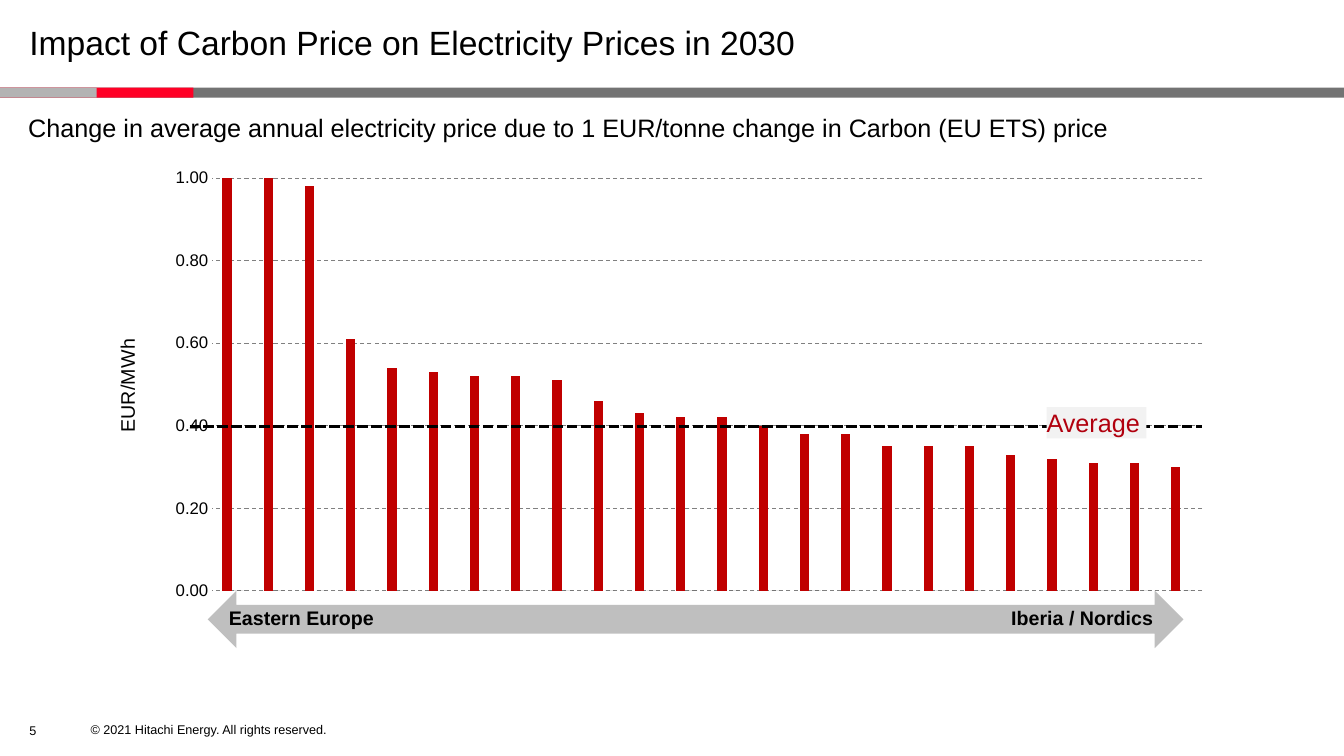
from dataclasses import dataclass

from lxml.etree import SubElement
from pptx import Presentation
from pptx.chart.chart import Chart
from pptx.chart.data import CategoryChartData
from pptx.dml.color import RGBColor
from pptx.enum.chart import XL_CHART_TYPE, XL_TICK_MARK
from pptx.enum.dml import MSO_LINE
from pptx.enum.shapes import MSO_CONNECTOR, MSO_SHAPE
from pptx.enum.text import MSO_ANCHOR
from pptx.oxml.ns import qn
from pptx.slide import Slide
from pptx.util import Inches, Pt

WIDTH, HEIGHT = Inches(13.33), Inches(7.5)


@dataclass(frozen=True)
class Theme:
    font: str = "Arial"
    black: str = "000000"
    white: str = "FFFFFF"
    dark: str = "737373"
    red: str = "FF0026"
    light: str = "B3B3B3"
    bar: str = "C00000"
    spare: str = "2D2D2D"
    grid: str = "808080"
    arrow: str = "BFBFBF"
    label: str = "B1000E"
    pale: str = "F2F2F2"
    title: int = 24
    lead: int = 18
    note: int = 14
    tick: int = 12
    base: int = 10
    foot: int = 9


THEME = Theme()


@dataclass(frozen=True)
class Box:
    """Left, top, width and height as percent of the slide."""
    left: float
    top: float
    wide: float
    high: float

    def place(self) -> tuple[int, int, int, int]:
        return (across(self.left), down(self.top),
                across(self.wide), down(self.high))


@dataclass(frozen=True)
class Block:
    box: Box
    fill: str
    kind: MSO_SHAPE = MSO_SHAPE.RECTANGLE


@dataclass(frozen=True)
class Label:
    box: Box
    text: str
    size: int
    color: str = THEME.black
    bold: bool = False
    anchor: MSO_ANCHOR = MSO_ANCHOR.TOP
    fill: str | None = None
    space: float = 1.0


def across(share: float) -> int:
    return int(WIDTH * share / 100)


def down(share: float) -> int:
    return int(HEIGHT * share / 100)


def paint(fill, color: str) -> None:
    fill.solid()
    fill.fore_color.rgb = RGBColor.from_string(color)


def style(font, size: int, color: str = THEME.black, bold: bool = False) -> None:
    font.name, font.size, font.bold = THEME.font, Pt(size), bold
    font.color.rgb = RGBColor.from_string(color)


def add_block(slide: Slide, block: Block) -> None:
    shape = slide.shapes.add_shape(block.kind, *block.box.place())
    shape.shadow.inherit = False
    paint(shape.fill, block.fill)
    shape.line.fill.background()


def add_label(slide: Slide, label: Label) -> None:
    shape = slide.shapes.add_textbox(*label.box.place())
    if label.fill:
        paint(shape.fill, label.fill)
    frame = shape.text_frame
    frame.word_wrap = True
    frame.vertical_anchor = label.anchor
    frame.margin_left = frame.margin_right = 0
    frame.margin_top = frame.margin_bottom = 0
    frame.text = label.text
    para = frame.paragraphs[0]
    para.line_spacing = label.space
    style(para.runs[0].font, label.size, label.color, label.bold)


def set_layout(node, index: int, **parts: str | float) -> None:
    """Fix the layout of a chart part, in shares of the chart."""
    layout = node.find(qn("c:layout"))
    if layout is None:
        layout = SubElement(node, qn("c:layout"))
        node.insert(index, layout)
    manual = SubElement(layout, qn("c:manualLayout"))
    for name, value in parts.items():
        SubElement(manual, qn(f"c:{name}")).set("val", str(value))


def add_bars(slide: Slide, box: Box, rates: list[float]) -> Chart:
    data = CategoryChartData(number_format="0.00")
    data.categories = [str(n + 1) for n in range(len(rates))]
    data.add_series("Series 1", rates)
    data.add_series("Series 2", [0] * len(rates))
    chart = slide.shapes.add_chart(
        XL_CHART_TYPE.COLUMN_CLUSTERED, *box.place(), data).chart
    style(chart.font, THEME.base)
    chart.has_legend = chart.has_title = False
    plot = chart.plots[0]
    plot.gap_width, plot.overlap, plot.vary_by_categories = 219, -27, False
    for series, color in zip(plot.series, (THEME.bar, THEME.spare)):
        paint(series.format.fill, color)

    # Axes and grid
    chart.category_axis.visible = False
    axis = chart.value_axis
    axis.minimum_scale, axis.maximum_scale, axis.major_unit = 0, 1, 0.2
    axis.major_tick_mark = axis.minor_tick_mark = XL_TICK_MARK.NONE
    axis.format.line.fill.background()
    axis.tick_labels.number_format = "#,##0.00"
    axis.tick_labels.number_format_is_linked = False
    style(axis.tick_labels.font, THEME.tick)
    grid = axis.major_gridlines.format.line
    grid.color.rgb = RGBColor.from_string(THEME.grid)
    grid.width, grid.dash_style = Pt(0.75), MSO_LINE.DASH
    frame = axis.axis_title.text_frame
    frame.text = "EUR/MWh"
    style(frame.paragraphs[0].runs[0].font, THEME.note)

    # Fixed places for the plot and the axis title
    root = chart.element if hasattr(chart, "element") else chart._chartSpace
    area = next(root.iter(qn("c:plotArea")))
    set_layout(area, 0, layoutTarget="inner", xMode="edge", yMode="edge",
               x=0.1, y=0.04, w=0.88, h=0.92)
    set_layout(next(area.iter(qn("c:title"))), 1,
               xMode="edge", yMode="edge", x=0.01, y=0.39)
    return chart


def add_mean(slide: Slide, left: float, right: float, top: float) -> None:
    line = slide.shapes.add_connector(
        MSO_CONNECTOR.STRAIGHT, across(left), down(top), across(right), down(top))
    line.line.color.rgb = RGBColor.from_string(THEME.black)
    line.line.width, line.line.dash_style = Pt(2.5), MSO_LINE.SQUARE_DOT
    SubElement(line.element.spPr, qn("a:effectLst"))


RATES = [1, 1, 0.98, 0.61, 0.54, 0.53, 0.52, 0.52, 0.51, 0.46, 0.43, 0.42,
         0.42, 0.4, 0.38, 0.38, 0.35, 0.35, 0.35, 0.33, 0.32, 0.31, 0.31, 0.3]
STRIPES = [Block(Box(0, 11.6, wide, 1.33), color) for wide, color in
           ((100, THEME.dark), (14.4, THEME.red), (7.2, THEME.light))]
RANGE = Block(Box(15.45, 78.13, 72.6, 7.6), THEME.arrow,
              MSO_SHAPE.LEFT_RIGHT_ARROW)
MIDDLE = MSO_ANCHOR.MIDDLE
LABELS = [
    Label(Box(2.18, 2.67, 72.7, 6.4),
          "Impact of Carbon Price on Electricity Prices in 2030",
          THEME.title, anchor=MIDDLE, space=0.95),
    Label(Box(2.1, 14.8, 86, 4),
          "Change in average annual electricity price due to 1 EUR/tonne "
          "change in Carbon (EU ETS) price", THEME.lead),
    Label(Box(17.03, 80.13, 10.88, 6.53), "Eastern Europe",
          THEME.note, bold=True),
    Label(Box(75.24, 80.13, 11.78, 6.53), "Iberia / Nordics",
          THEME.note, bold=True),
    Label(Box(77.87, 53.87, 7.43, 4.13), "Average", THEME.lead,
          THEME.label, fill=THEME.pale),
    Label(Box(2.18, 94.4, 2.5, 4.4), "5", THEME.foot, anchor=MIDDLE),
    Label(Box(6.75, 95.2, 18.6, 2.67),
          "© 2021 Hitachi Energy. All rights reserved.",
          THEME.foot, anchor=MIDDLE),
]


def main() -> None:
    deck = Presentation()
    deck.slide_width, deck.slide_height = WIDTH, HEIGHT
    slide = deck.slides.add_slide(deck.slide_layouts[6])
    paint(slide.background.fill, THEME.white)
    for stripe in STRIPES:
        add_block(slide, stripe)
    add_bars(slide, Box(7.43, 21.2, 83.7, 59.33), RATES)
    add_block(slide, RANGE)
    add_mean(slide, 14.1, 89.4, 56.4)
    for label in LABELS:
        add_label(slide, label)
    deck.save("out.pptx")


if __name__ == "__main__":
    main()
